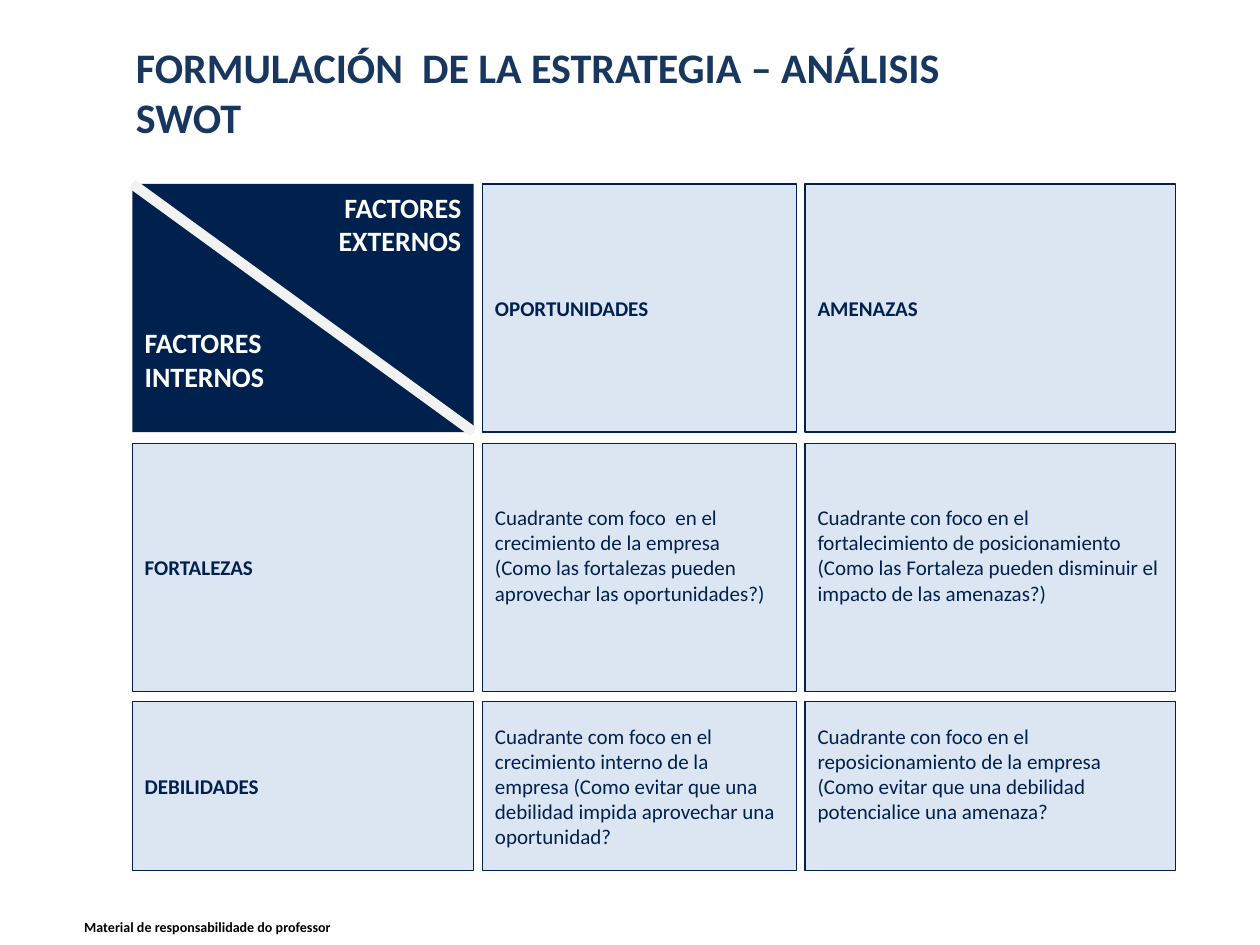
import typing

import pptx
import pptx.dml.color
import pptx.enum.shapes
import pptx.enum.text
import pptx.oxml
import pptx.util
from pptx.util import Inches

RGBColor = pptx.dml.color.RGBColor
NAVY = RGBColor(0x00, 0x21, 0x4D)
PALE = RGBColor(0xDC, 0xE6, 0xF2)
BLUE = RGBColor(0x17, 0x37, 0x5E)
GREY = RGBColor(0xF2, 0xF2, 0xF2)
WHITE = RGBColor(0xFF, 0xFF, 0xFF)
BLACK = RGBColor(0x00, 0x00, 0x00)

ALIGN = pptx.enum.text.PP_ALIGN
ANCHOR = pptx.enum.text.MSO_ANCHOR


class Span(typing.NamedTuple):
    """Start and size of a column or row, in inches."""
    start: float
    size: float


class Cell(typing.NamedTuple):
    row: int
    col: int
    text: str
    bold: bool = False
    foot: float = 0.05


COLS = [Span(1.05, 2.71), Span(3.83, 2.49), Span(6.39, 2.94)]
ROWS = [Span(1.46, 1.97), Span(3.52, 1.97), Span(5.57, 1.34)]
LIFT = 0.25  # bottom inset that raises a centred text by half a line

CELLS = [
    Cell(0, 1, "OPORTUNIDADES", True),
    Cell(0, 2, "AMENAZAS", True),
    Cell(1, 0, "FORTALEZAS", True),
    Cell(1, 1, "Cuadrante com foco  en el\ncrecimiento de la empresa\n"
         "(Como las fortalezas pueden aprovechar las oportunidades?)", foot=LIFT),
    Cell(1, 2, "Cuadrante con foco en el fortalecimiento de posicionamiento\n"
         "(Como las Fortaleza pueden disminuir el impacto de las amenazas?)", foot=LIFT),
    Cell(2, 0, "DEBILIDADES", True),
    Cell(2, 1, "Cuadrante com foco en el crecimiento interno de la empresa "
         "(Como evitar que una debilidad impida aprovechar una oportunidad?"),
    Cell(2, 2, "Cuadrante con foco en el reposicionamiento de la empresa\n"
         "(Como evitar que una debilidad potencialice una amenaza?", foot=LIFT),
]


def write(shape, text: str, size: float, color: RGBColor, bold: bool, anchor=ANCHOR.TOP) -> None:
    frame = shape.text_frame
    frame.text = text
    frame.word_wrap = True
    frame.vertical_anchor = anchor
    for para in frame.paragraphs:
        para.alignment = ALIGN.LEFT
        for run in para.runs:
            run.font.name = "Calibri"
            run.font.size = pptx.util.Pt(size)
            run.font.bold = bold
            run.font.color.rgb = color


def add_box(slide, row: Span, col: Span, fill: RGBColor):
    box = slide.shapes.add_shape(
        pptx.enum.shapes.MSO_SHAPE.RECTANGLE,
        Inches(col.start), Inches(row.start), Inches(col.size), Inches(row.size))
    box.shadow.inherit = False
    box.fill.solid()
    box.fill.fore_color.rgb = fill
    return box


def add_cell(slide, cell: Cell) -> None:
    box = add_box(slide, ROWS[cell.row], COLS[cell.col], PALE)
    box.line.color.rgb = NAVY
    box.line.width = pptx.util.Pt(0.75)
    write(box, cell.text, 12, NAVY, cell.bold, ANCHOR.MIDDLE)
    box.text_frame.margin_bottom = Inches(cell.foot)


def add_corner(slide) -> None:
    """Dark heading cell, split by a diagonal."""
    row, col = ROWS[0], COLS[0]
    box = add_box(slide, row, col, NAVY)
    box.line.fill.background()
    write(box, "FACTORES\nEXTERNOS\nFACTORES\nINTERNOS", 16, WHITE, True)
    paras = box.text_frame.paragraphs
    for para in paras[:2]:
        para.alignment = ALIGN.RIGHT
    paras[2].space_before = pptx.util.Pt(39)

    line = slide.shapes.add_connector(
        pptx.enum.shapes.MSO_CONNECTOR.STRAIGHT,
        Inches(col.start + col.size), Inches(row.start + row.size),
        Inches(col.start), Inches(row.start))
    line.line.color.rgb = GREY
    line.line.width = pptx.util.Pt(6)
    line._element.spPr.append(pptx.oxml.parse_xml(
        '<a:effectLst xmlns:a="http://schemas.openxmlformats.org/drawingml/2006/main"/>'))


def add_label(slide, row: Span, col: Span, text: str, size: float, color: RGBColor) -> None:
    box = slide.shapes.add_textbox(
        Inches(col.start), Inches(row.start), Inches(col.size), Inches(row.size))
    write(box, text, size, color, True)


def main() -> None:
    deck = pptx.Presentation()
    deck.slide_width, deck.slide_height = Inches(10), Inches(7.5)
    slide = deck.slides.add_slide(deck.slide_layouts[6])
    add_label(slide, Span(7.24, 0.23), Span(0.57, 5.67),
              "Material de responsabilidade do professor", 8, BLACK)
    for cell in CELLS:
        add_cell(slide, cell)
    add_corner(slide)
    add_label(slide, Span(0.28, 0.51), Span(0.98, 6.93),
              "FORMULACIÓN  DE LA ESTRATEGIA – ANÁLISIS SWOT", 24, BLUE)
    deck.save("out.pptx")


if __name__ == "__main__":
    main()
